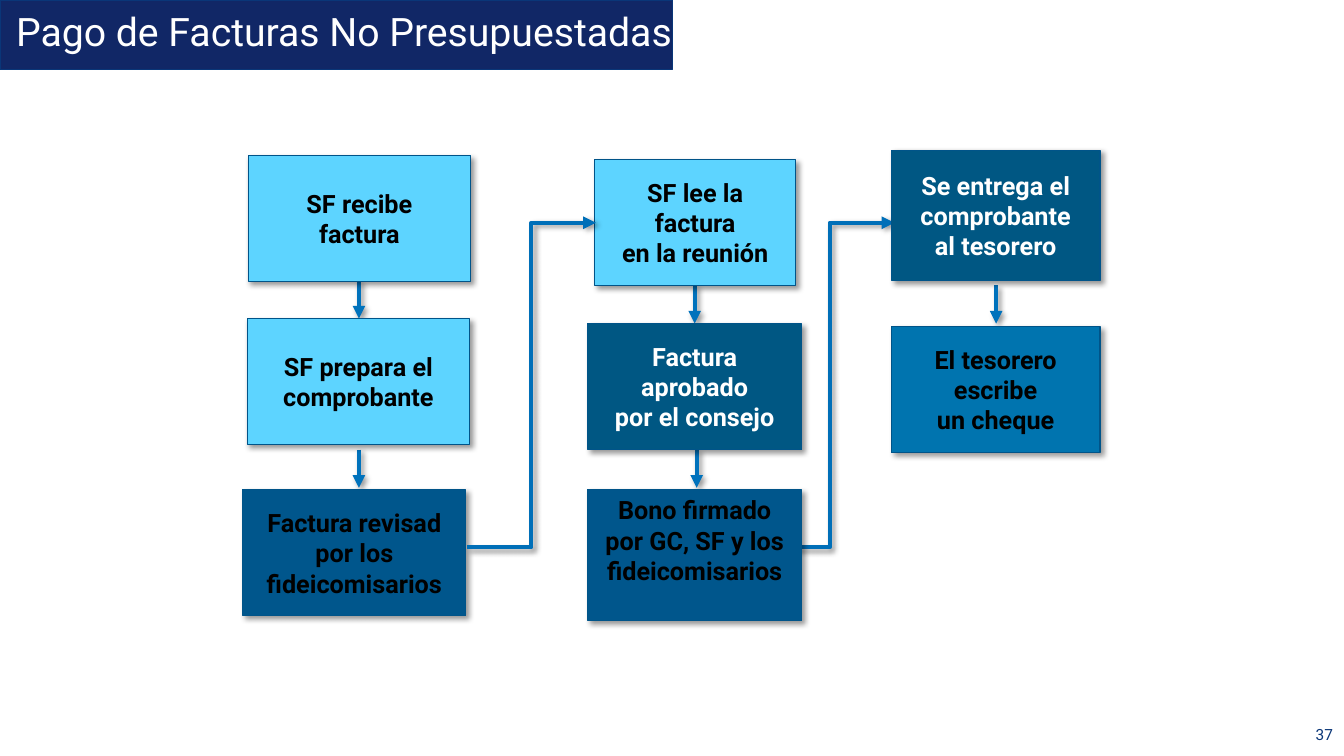
from lxml import etree
from pptx import Presentation
from pptx import util as u
from pptx.dml.color import RGBColor
from pptx.enum import shapes, text
from pptx.oxml import ns

NAVY = RGBColor(0x11, 0x27, 0x66)
NAVY_EDGE = RGBColor(0x0A, 0x36, 0x78)
SKY = RGBColor(0x5D, 0xD4, 0xFF)
TEAL = RGBColor(0x00, 0x57, 0x83)
BLUE = RGBColor(0x00, 0x56, 0x8C)
BRIGHT = RGBColor(0x00, 0x74, 0xAF)
BOX_EDGE = RGBColor(0x00, 0x54, 0x89)
ARROW = RGBColor(0x00, 0x72, 0xBC)
ELBOW = RGBColor(0x00, 0x6F, 0xB8)
BLACK = RGBColor(0, 0, 0)
WHITE = RGBColor(0xFF, 0xFF, 0xFF)


class FlowSlide:
    font = "Roboto"

    def __init__(self, prs):
        self.slide = prs.slides.add_slide(prs.slide_layouts[6])

    def shadow(self, item):
        """Soft shadow down and to the right."""
        effects = etree.SubElement(item._element.spPr, ns.qn("a:effectLst"))
        outer = etree.SubElement(effects, ns.qn("a:outerShdw"),
                                 blurRad=str(u.Pt(4)), dist=str(u.Pt(3)),
                                 dir="2700000", algn="tl", rotWithShape="0")
        colour = etree.SubElement(outer, ns.qn("a:srgbClr"), val="000000")
        etree.SubElement(colour, ns.qn("a:alpha"), val="40000")

    def fill_text(self, frame, lines, size, colour, align, bold=False):
        frame.text = "\n".join(lines)
        for paragraph in frame.paragraphs:
            paragraph.alignment = align
            for run in paragraph.runs:
                run.font.name = self.font
                run.font.size = u.Pt(size)
                run.font.bold = bold
                run.font.color.rgb = colour

    def block(self, preset, place, fill, edge, width):
        shape = self.slide.shapes.add_shape(preset, *map(u.Inches, place))
        shape.fill.solid()
        shape.fill.fore_color.rgb = fill
        shape.line.color.rgb = edge
        shape.line.width = u.Pt(width)
        return shape

    def banner(self, place, fill, edge):
        band = self.block(shapes.MSO_SHAPE.RECTANGLE, place, fill, edge, 1)
        band.shadow.inherit = False

    def label(self, place, words, size, colour, align, anchor, left=0.1, top=0.05):
        frame = self.slide.shapes.add_textbox(*map(u.Inches, place)).text_frame
        frame.word_wrap = True
        frame.vertical_anchor = anchor
        frame.margin_left, frame.margin_top = u.Inches(left), u.Inches(top)
        self.fill_text(frame, [words], size, colour, align)
        return frame

    def step(self, place, lines, fill, colour=BLACK, anchor=text.MSO_ANCHOR.MIDDLE):
        box = self.block(shapes.MSO_SHAPE.FLOWCHART_PROCESS, place, fill, BOX_EDGE, 0.75)
        self.shadow(box)
        frame = box.text_frame
        frame.word_wrap = False
        frame.vertical_anchor = anchor
        self.fill_text(frame, lines, 18, colour, text.PP_ALIGN.CENTER, bold=True)

    def arrow(self, start, end, kind=shapes.MSO_CONNECTOR.STRAIGHT, colour=ARROW):
        link = self.slide.shapes.add_connector(kind, *map(u.Inches, start + end))
        link.line.color.rgb = colour
        link.line.width = u.Pt(3)
        outline = link._element.spPr.find(ns.qn("a:ln"))
        etree.SubElement(outline, ns.qn("a:tailEnd"), type="triangle")
        self.shadow(link)

    def next_column(self, start_x):
        """Elbow from the foot of one column to the head of the next."""
        self.arrow((start_x, 5.43), (start_x + 1.28, 2.21),
                   shapes.MSO_CONNECTOR.ELBOW, ELBOW)


def main():
    prs = Presentation()
    prs.slide_width, prs.slide_height = u.Inches(13.33), u.Inches(7.5)
    flow = FlowSlide(prs)

    # Title band and page number
    flow.banner((0, 0, 6.67, 0.69), NAVY, NAVY_EDGE)
    title = flow.label((0, 0.03, 7.63, 0.58), "Pago de Facturas No Presupuestadas", 28,
                       WHITE, text.PP_ALIGN.LEFT, text.MSO_ANCHOR.TOP, 0.16, 0.1)
    title.paragraphs[0].line_spacing = 0.9
    flow.label((12.85, 7.09, 0.47, 0.4), "37", 11, NAVY_EDGE,
               text.PP_ALIGN.RIGHT, text.MSO_ANCHOR.MIDDLE)

    # Arrows down each column
    for x, y in [(3.56, 2.78), (3.56, 4.46), (6.89, 2.83), (6.91, 4.46), (9.88, 2.83)]:
        flow.arrow((x, y), (x, y + 0.38))
    flow.next_column(7.59)

    # Invoice received, prepared and reviewed
    flow.step((2.46, 1.54, 2.21, 1.25), ["SF recibe", "factura"], SKY)
    flow.step((2.45, 3.16, 2.21, 1.25), ["SF prepara el", "comprobante"], SKY)
    flow.step((2.41, 4.86, 2.21, 1.25),
              ["Factura revisad", "por los", "fideicomisarios"], BLUE)

    # Council reads, approves and signs
    flow.step((5.9, 1.58, 1.99, 1.25), ["SF lee la", "factura", "en la reunión"], SKY)
    flow.step((5.83, 3.21, 2.12, 1.25),
              ["Factura", "aprobado", "por el consejo"], TEAL, WHITE)
    flow.step((5.83, 4.86, 2.12, 1.3),
              ["Bono firmado", "por GC, SF y los", "fideicomisarios"], BLUE,
              anchor=text.MSO_ANCHOR.TOP)

    # Treasurer pays
    flow.step((8.84, 1.49, 2.07, 1.29),
              ["Se entrega el", "comprobante", "al tesorero"], TEAL, WHITE)
    flow.step((8.84, 3.24, 2.07, 1.25), ["El tesorero", "escribe", "un cheque"], BRIGHT)

    flow.next_column(4.63)
    prs.save("out.pptx")


if __name__ == "__main__":
    main()
